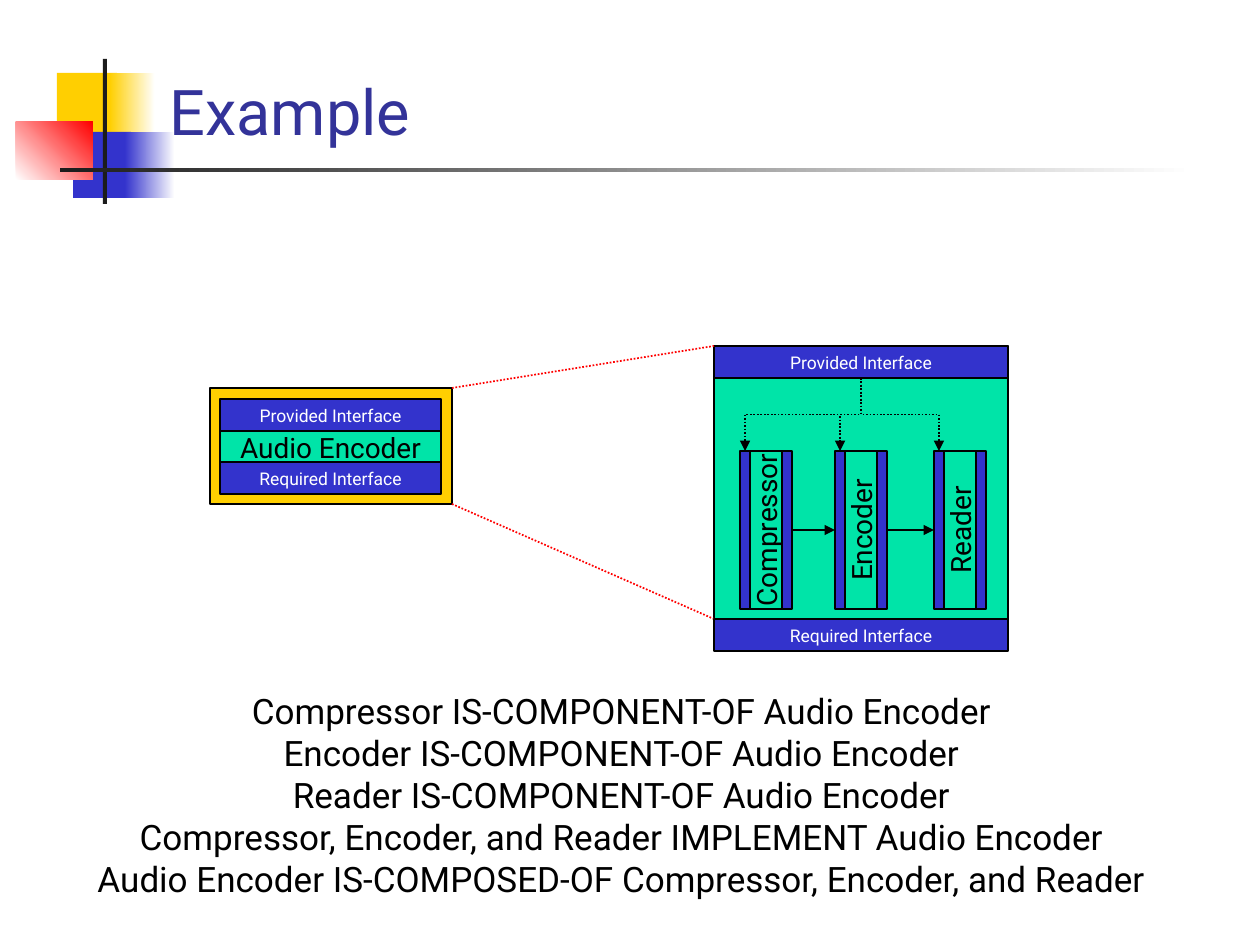
from lxml.etree import SubElement
from pptx import Presentation
from pptx.dml.color import RGBColor
from pptx.enum.dml import MSO_LINE
from pptx.enum.shapes import MSO_CONNECTOR, MSO_SHAPE
from pptx.enum.text import MSO_ANCHOR, MSO_AUTO_SIZE, PP_ALIGN
from pptx.oxml.ns import qn
from pptx.util import Pt

FONT = "Roboto"
COLORS = {
    "yellow": "FFCF01", "blue": "3333CC", "red": "FF0000", "green": "00E4A8",
    "white": "FFFFFF", "black": "000000", "ink": "1C1C1C", "title": "333399",
}
TITLE = "Example"
STATEMENTS = [
    "Compressor IS-COMPONENT-OF Audio Encoder",
    "Encoder IS-COMPONENT-OF Audio Encoder",
    "Reader IS-COMPONENT-OF Audio Encoder",
    "Compressor, Encoder, and Reader IMPLEMENT Audio Encoder",
    "Audio Encoder IS-COMPOSED-OF Compressor, Encoder, and Reader",
]
DECORATION = [
    ((57, 73, 60, 66), ("yellow",), 0),
    ((110, 73, 45, 66), ("yellow", "white"), 0),
    ((73, 132, 58, 66), ("blue",), 0),
    ((125, 132, 50, 66), ("blue", "white"), 0),
    ((16, 122, 77, 58), ("white", "red"), 45),
    ((103, 59, 4, 145), ("ink",), 0),
    ((60, 168, 1134, 4), ("ink", "white"), 0),
]
PROVIDED, REQUIRED = "Provided Interface", "Required Interface"
ENCODER_ROWS = [(399, "blue", PROVIDED), (431, "green", "Audio Encoder"), (462, "blue", REQUIRED)]
COMPONENTS = [("Compressor", 766), ("Encoder", 861), ("Reader", 960)]
TEXT_STYLE = {"blue": (10, "white"), "green": (16, "black")}

BAR = 32
OUTER = (210, 388, 242, 116)
DETAIL = (714, 346, 294, 273)
COLUMN_MIDDLE, COLUMN_LENGTH = 530, 158
RAIL, RAIL_OFFSET = 10, 21


def px(value):
    return round(value * 914400 / 126)


def color(name):
    return RGBColor.from_string(COLORS[name])


def style_paragraph(para, size, name, align):
    para.alignment = align
    para.font.name, para.font.size = FONT, Pt(size)
    para.font.color.rgb = color(name)


def add_box(shapes, place, fill, text="", rotation=0):
    box = shapes.add_shape(MSO_SHAPE.RECTANGLE, *map(px, place))
    box.shadow.inherit = False
    box.rotation = rotation
    box.fill.solid()
    box.fill.fore_color.rgb = color(fill)
    box.line.color.rgb = color("black")
    box.line.width = Pt(1)
    if text:
        frame = box.text_frame
        frame.word_wrap = False
        frame.vertical_anchor = MSO_ANCHOR.MIDDLE
        frame.text = text
        style_paragraph(frame.paragraphs[0], *TEXT_STYLE[fill], PP_ALIGN.CENTER)
    return box


def add_upright(shapes, middle, thickness, fill, text=""):
    place = (middle - COLUMN_LENGTH / 2, COLUMN_MIDDLE - thickness / 2, COLUMN_LENGTH, thickness)
    return add_box(shapes, place, fill, text, 270)


def add_line(shapes, start, end, name="black", kind=MSO_CONNECTOR.STRAIGHT, dotted=False, arrow=False):
    line = shapes.add_connector(kind, *map(px, start + end))
    line.line.color.rgb = color(name)
    line.line.width = Pt(1)
    if dotted:
        line.line.dash_style = MSO_LINE.ROUND_DOT
    properties = line.element.spPr
    if arrow:
        SubElement(properties.find(qn("a:ln")), qn("a:tailEnd"), type="triangle")
    SubElement(properties, qn("a:effectLst"))
    return line


def add_drop(shapes, start, end):
    line = add_line(shapes, start, end, kind=MSO_CONNECTOR.ELBOW, dotted=True, arrow=True)
    across, down = abs(end[0] - start[0]), end[1] - start[1]
    line.left = px((start[0] + end[0] - down) / 2)
    line.top = px((start[1] + end[1] - across) / 2)
    line.width, line.height = px(down), px(across)
    transform = line.element.spPr.find(qn("a:xfrm"))
    to_right = end[0] > start[0]
    transform.set("rot", str((270 if to_right else 90) * 60000))
    transform.set("flipH", "1" if to_right else "0")


def add_flow(shapes, source, target, start_x, end_x):
    start, end = (start_x, COLUMN_MIDDLE), (end_x, COLUMN_MIDDLE)
    line = add_line(shapes, start, end, arrow=True)
    line.begin_connect(source, 2)
    line.end_connect(target, 0)
    line.begin_x, line.begin_y = map(px, start)
    line.end_x, line.end_y = map(px, end)


def add_title(page):
    title = page.shapes.title
    title.left, title.top, title.width, title.height = map(px, (157, 49, 1074, 105))
    frame = title.text_frame
    frame.text = TITLE
    frame.auto_size = MSO_AUTO_SIZE.NONE
    frame.vertical_anchor = MSO_ANCHOR.BOTTOM
    style_paragraph(frame.paragraphs[0], 36, "title", PP_ALIGN.LEFT)
    for place, fills, angle in DECORATION:
        block = add_box(page.shapes, place, fills[0])
        block.line.fill.background()
        if len(fills) == 2:
            block.fill.gradient()
            block.fill.gradient_angle = angle
            for stop, name, position in zip(block.fill.gradient_stops, fills, (0, 1)):
                stop.color.rgb = color(name)
                stop.position = position
        title.element.addprevious(block.element)


def add_statements(page):
    frame = page.shapes.add_textbox(*map(px, (83, 683, 1077, 223))).text_frame
    frame.word_wrap = False
    frame.auto_size = MSO_AUTO_SIZE.SHAPE_TO_FIT_TEXT
    frame.text = "\n".join(STATEMENTS)
    for para in frame.paragraphs:
        style_paragraph(para, 20, "black", PP_ALIGN.CENTER)


def add_encoder(page):
    shapes = page.shapes.add_group_shape().shapes
    add_box(shapes, OUTER, "yellow")
    for top, fill, text in ENCODER_ROWS:
        add_box(shapes, (220, top, 221, BAR), fill, text)


def add_detail(page):
    shapes = page.shapes
    left, top, width, height = DETAIL
    bottom = top + height
    add_box(shapes, DETAIL, "green")
    add_box(shapes, (left, top, width, BAR), "blue", PROVIDED)
    previous = None
    for name, middle in COMPONENTS:
        left_rail = add_upright(shapes, middle - RAIL_OFFSET, RAIL, "blue")
        add_upright(shapes, middle, BAR, "green", name)
        right_rail = add_upright(shapes, middle + RAIL_OFFSET, RAIL, "blue")
        add_drop(shapes, (left + width / 2, top + BAR),
                 (middle - RAIL_OFFSET, COLUMN_MIDDLE - COLUMN_LENGTH / 2))
        edge = RAIL_OFFSET + RAIL / 2
        if previous:
            add_flow(shapes, previous[0], left_rail, previous[1], middle - edge)
        previous = right_rail, middle + edge
    outer_right = OUTER[0] + OUTER[2]
    for outer_y, detail_y in ((OUTER[1] + OUTER[3], bottom), (OUTER[1], top)):
        add_line(shapes, (outer_right, outer_y), (left, detail_y), "red", dotted=True)
    add_box(shapes, (left, bottom, width, BAR), "blue", REQUIRED)


def main():
    deck = Presentation()
    deck.slide_width, deck.slide_height = px(1260), px(945)
    page = deck.slides.add_slide(deck.slide_layouts[5])
    add_title(page)
    add_statements(page)
    add_encoder(page)
    add_detail(page)
    deck.save("out.pptx")


if __name__ == "__main__":
    main()
